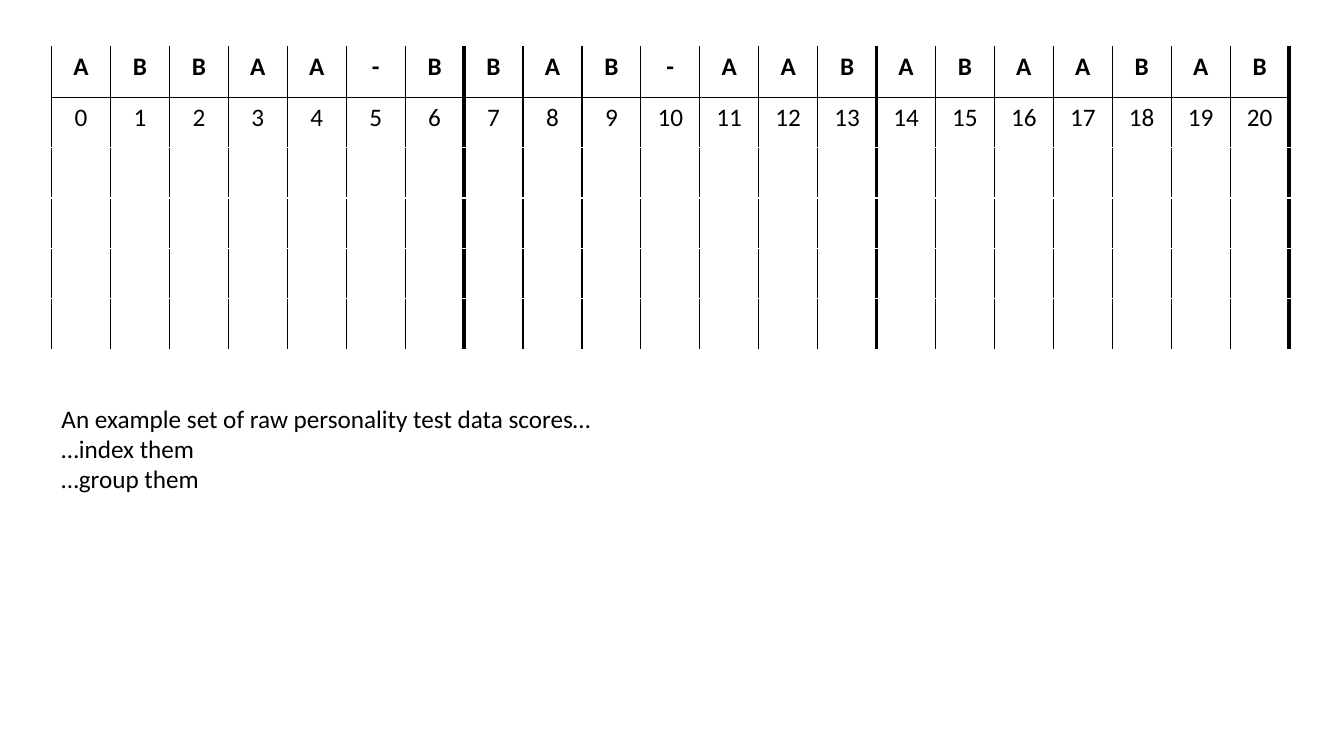
from dataclasses import dataclass

from lxml import etree
from pptx import Presentation
from pptx import util as u
from pptx.dml import color
from pptx.enum import text
from pptx.oxml import ns

SCORES = "ABBAA-BBAB-AABABAABAB"
NOTES = [
    "An example set of raw personality test data scores…",
    "…index them",
    "…group them",
]
ROWS = 6
GROUP = 7


@dataclass(frozen=True)
class Theme:
    ink: str = "000000"
    paper: str = "FFFFFF"
    font: str = "Calibri"
    size: int = 18
    thin: int = 1
    thick: int = 3


LOOK = Theme()


def style(par, bold=False):
    for run in par.runs:
        font = run.font
        font.name = LOOK.font
        font.size = u.Pt(LOOK.size)
        font.bold = bold
        font.color.rgb = color.RGBColor.from_string(LOOK.ink)


def edge(cell, side, tint, width):
    props = cell._tc.get_or_add_tcPr()
    line = etree.SubElement(props, ns.qn(f"a:ln{side}"), w=str(u.Pt(width)))
    fill = etree.SubElement(line, ns.qn("a:solidFill"))
    etree.SubElement(fill, ns.qn("a:srgbClr"), val=tint)


def weight(index):
    return LOOK.thick if index and index % GROUP == 0 else LOOK.thin


def rule(index):
    return LOOK.ink if index == 1 else LOOK.paper


def add_grid(slide):
    count = len(SCORES)
    data = [list(SCORES), [str(n) for n in range(count)]]
    wide, high = u.Cm(31.19), u.Cm(7.62)
    frame = slide.shapes.add_table(
        ROWS, count, u.Cm(1.3), u.Cm(1.18), wide, high)
    table = frame.table
    table.horz_banding = False
    for col in table.columns:
        col.width = wide // count
    for row in table.rows:
        row.height = high // ROWS
    for r in range(ROWS):
        for c in range(count):
            cell = table.cell(r, c)
            edge(cell, "L", LOOK.ink, weight(c))
            edge(cell, "R", LOOK.ink, weight(c + 1))
            edge(cell, "T", rule(r), LOOK.thin)
            edge(cell, "B", rule(r + 1), LOOK.thin)
            cell.fill.solid()
            cell.fill.fore_color.rgb = color.RGBColor.from_string(LOOK.paper)
            if r < len(data):
                cell.text_frame.text = data[r][c]
                par = cell.text_frame.paragraphs[0]
                par.alignment = text.PP_ALIGN.CENTER
                style(par, bold=r == 0)


def add_notes(slide):
    box = slide.shapes.add_textbox(
        u.Cm(1.3), u.Cm(10.03), u.Cm(17.96), u.Cm(3.33))
    frame = box.text_frame
    frame.word_wrap = True
    frame.text = "\n".join(NOTES)
    for par in frame.paragraphs:
        style(par)


def main():
    deck = Presentation()
    deck.slide_width, deck.slide_height = u.Cm(33.87), u.Cm(19.05)
    slide = deck.slides.add_slide(deck.slide_layouts[6])
    add_grid(slide)
    add_notes(slide)
    deck.save("out.pptx")


if __name__ == "__main__":
    main()
